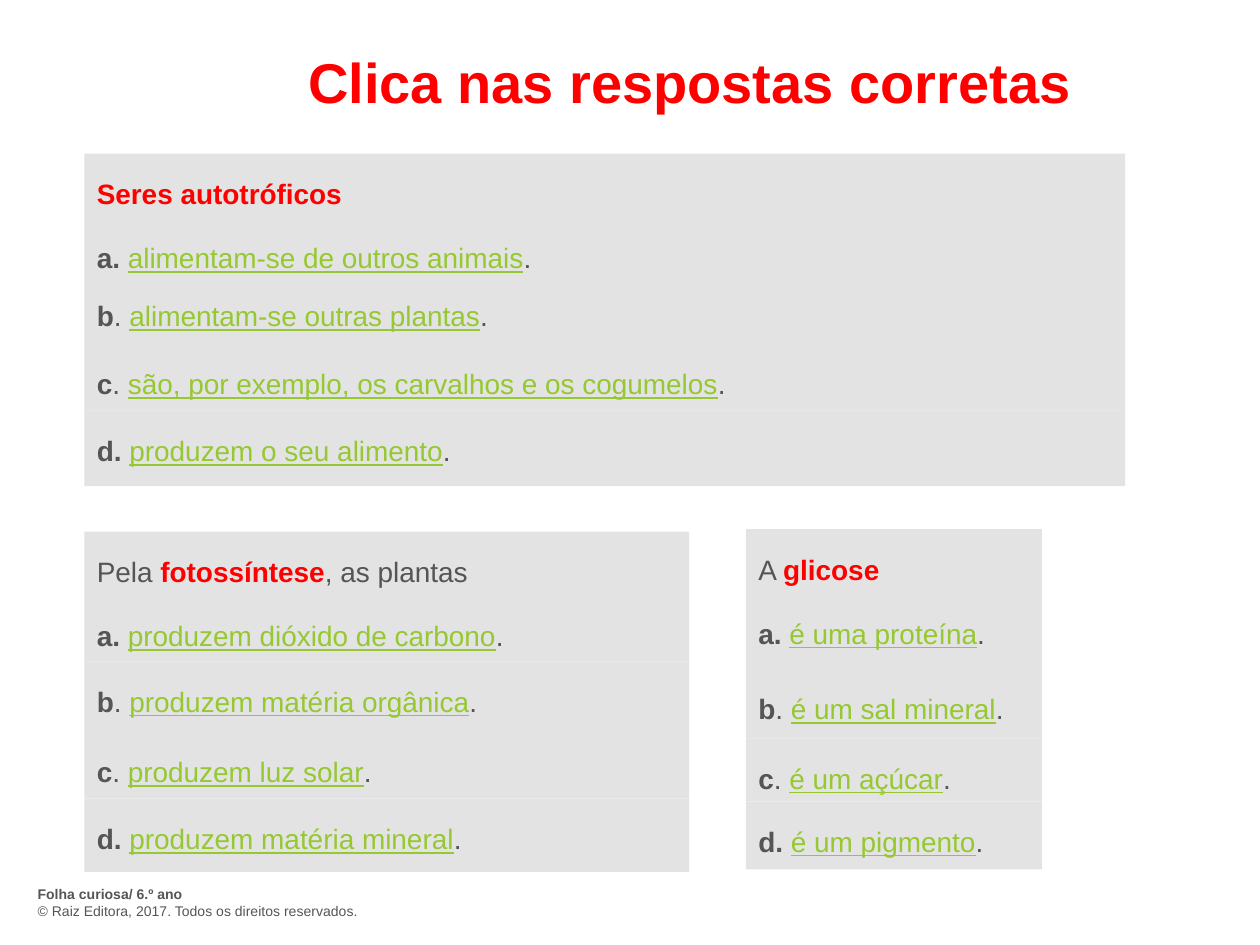
from dataclasses import dataclass

from lxml import etree
from pptx import Presentation
from pptx.dml.color import RGBColor
from pptx.enum.shapes import MSO_SHAPE
from pptx.enum.text import MSO_ANCHOR, PP_ALIGN
from pptx.oxml.ns import qn
from pptx.util import Pt

RECTANGLE = MSO_SHAPE.RECTANGLE
TOP, MIDDLE = MSO_ANCHOR.TOP, MSO_ANCHOR.MIDDLE
LEFT, CENTER, JUSTIFY = PP_ALIGN.LEFT, PP_ALIGN.CENTER, PP_ALIGN.JUSTIFY


@dataclass(frozen=True)
class Theme:
    font: str = "Arial"
    red: str = "FF0000"
    outline: str = "C00000"
    gray: str = "555555"
    green: str = "96C832"
    panel: str = "DDDDDD"
    panel_opacity: int = 80
    title_size: float = 32
    body_size: float = 16
    footer_size: float = 8


THEME = Theme()

QUESTIONS = [
    {
        "left": 48.24, "top": 87.84, "width": 594.72,
        "heights": [69.84, 38.88, 38.16, 43.2],
        "stem": ("", "Seres autotróficos", ""),
        "answers": ["alimentam-se de outros animais", "alimentam-se outras plantas",
                    "são, por exemplo, os carvalhos e os cogumelos",
                    "produzem o seu alimento"],
    },
    {
        "left": 48.24, "top": 303.84, "width": 345.6,
        "heights": [74.16, 40.32, 38.16, 41.76],
        "stem": ("Pela ", "fotossíntese", ", as plantas"),
        "answers": ["produzem dióxido de carbono", "produzem matéria orgânica",
                    "produzem luz solar", "produzem matéria mineral"],
    },
    {
        "left": 426.24, "top": 302.4, "width": 169.2,
        "heights": [79.92, 39.6, 36, 38.88],
        "stem": ("A ", "glicose", ""),
        "answers": ["é uma proteína", "é um sal mineral", "é um açúcar", "é um pigmento"],
    },
]


def add_run(paragraph, text, size=THEME.body_size, color=THEME.gray, bold=False,
            underline=False):
    run = paragraph.add_run()
    run.text = text
    run.font.name = THEME.font
    run.font.size = Pt(size)
    run.font.color.rgb = RGBColor.from_string(color)
    run.font.bold = bold
    run.font.underline = underline
    return run


def outline_run(run, color, width):
    line = etree.Element(qn("a:ln"), w=str(int(Pt(width))))
    fill = etree.SubElement(line, qn("a:solidFill"))
    etree.SubElement(fill, qn("a:srgbClr"), val=color)
    run.font._element.insert(0, line)


def add_text_box(slide, left, top, width, height, anchor=TOP):
    frame = slide.shapes.add_textbox(Pt(left), Pt(top), Pt(width), Pt(height)).text_frame
    frame.word_wrap = True
    frame.vertical_anchor = anchor
    return frame


def add_panel(slide, left, top, width, height):
    panel = slide.shapes.add_shape(RECTANGLE, Pt(left), Pt(top), Pt(width), Pt(height))
    panel.shadow.inherit = False
    panel.line.fill.background()
    panel.fill.solid()
    panel.fill.fore_color.rgb = RGBColor.from_string(THEME.panel)
    color = panel._element.spPr.find(qn("a:solidFill")).find(qn("a:srgbClr"))
    etree.SubElement(color, qn("a:alpha"), val=str(THEME.panel_opacity * 1000))
    panel.text_frame.word_wrap = True
    panel.text_frame.vertical_anchor = TOP
    return panel.text_frame


def format_line(paragraph):
    paragraph.alignment = JUSTIFY
    paragraph.line_spacing = 1.5


def write_stem(paragraph, before, keyword, after):
    format_line(paragraph)
    for text, is_keyword in ((before, False), (keyword, True), (after, False)):
        if text:
            add_run(paragraph, text, color=THEME.red if is_keyword else THEME.gray,
                    bold=is_keyword)


def write_answer(paragraph, letter, answer):
    format_line(paragraph)
    add_run(paragraph, letter, bold=True)
    add_run(paragraph, ". ", bold=letter in "ad")
    add_run(paragraph, answer, color=THEME.green, underline=True)
    add_run(paragraph, ".")


def add_question(slide, left, top, width, heights, stem, answers):
    for letter, answer, height in zip("abcd", answers, heights):
        frame = add_panel(slide, left, top, width, height)
        line = frame.paragraphs[0]
        if letter == "a":
            write_stem(line, *stem)
            line = frame.add_paragraph()
            line.space_before = Pt(8)
        write_answer(line, letter, answer)
        top += height


def add_title(slide):
    heading = add_text_box(slide, 93.6, 15.12, 601.2, 62.64, anchor=MIDDLE).paragraphs[0]
    heading.alignment = CENTER
    run = add_run(heading, "Clica nas respostas corretas", size=THEME.title_size,
                  color=THEME.red, bold=True)
    outline_run(run, THEME.outline, 1.5)


def add_footer(slide):
    frame = add_text_box(slide, 14.4, 502.56, 691.92, 26.64)
    series, rights = frame.paragraphs[0], frame.add_paragraph()
    series.alignment = rights.alignment = LEFT
    add_run(series, "Folha curiosa/ 6.º ano", size=THEME.footer_size, bold=True)
    add_run(rights, "© Raiz Editora, 2017. Todos os direitos reservados.",
            size=THEME.footer_size)


def main():
    presentation = Presentation()
    presentation.slide_width, presentation.slide_height = Pt(720), Pt(540)
    slide = presentation.slides.add_slide(presentation.slide_layouts[6])
    add_footer(slide)
    add_title(slide)
    for question in QUESTIONS:
        add_question(slide, **question)
    presentation.save("out.pptx")


if __name__ == "__main__":
    main()
